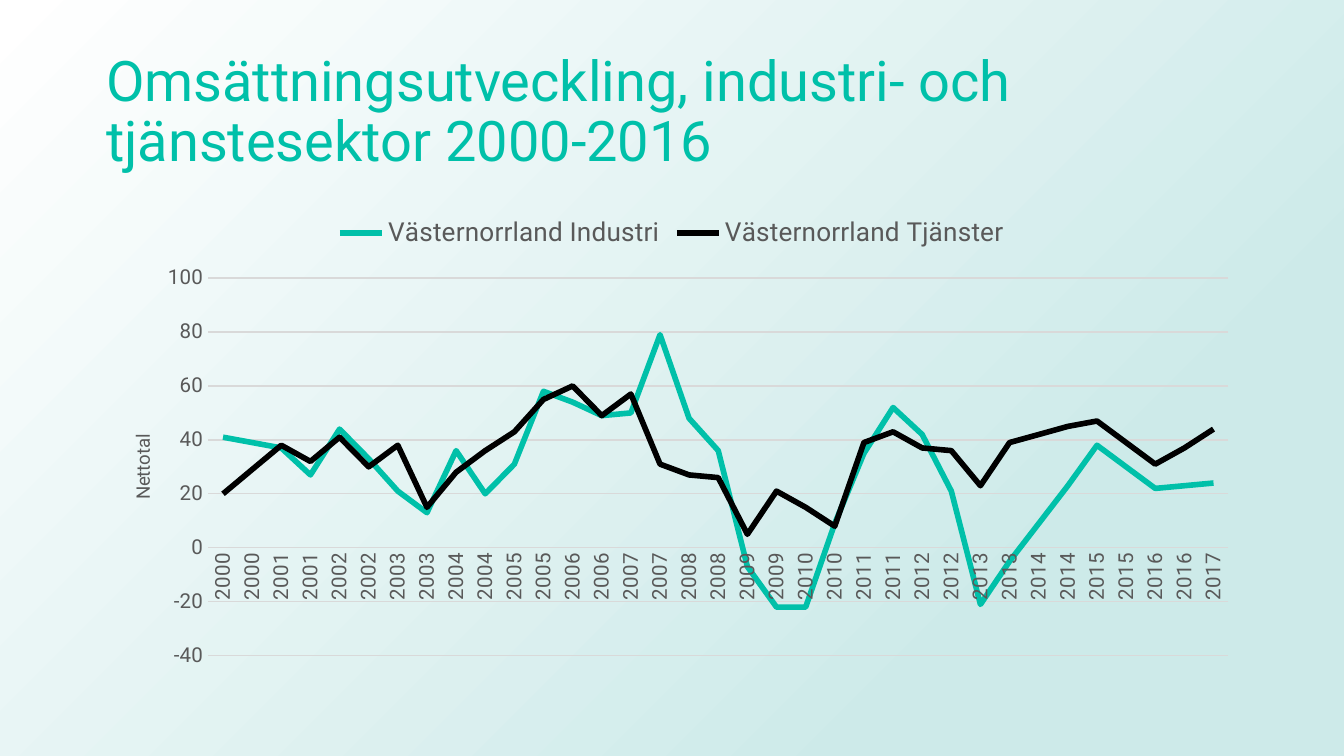
from lxml.etree import SubElement
from pptx import Presentation
from pptx.chart.data import CategoryChartData
from pptx.dml.color import RGBColor
from pptx.enum.chart import XL_CHART_TYPE, XL_LEGEND_POSITION, XL_MARKER_STYLE, XL_TICK_MARK
from pptx.enum.shapes import MSO_SHAPE
from pptx.enum.text import MSO_ANCHOR, MSO_AUTO_SIZE, PP_ALIGN
from pptx.oxml import parse_xml
from pptx.oxml.ns import nsdecls, qn
from pptx.util import Cm, Pt

FONT = "Roboto"
COLORS = {
    "teal": "00C0A9",
    "black": "000000",
    "label": "595959",
    "grid": "D9D9D9",
    "mist": "CDEAE9",
    "white": "FFFFFF",
}
PAGE_WIDTH, PAGE_HEIGHT = Cm(25.4), Cm(14.29)

# Half-yearly values, from 2000 to the first half of 2017
YEARS = [str(2000 + half // 2) for half in range(35)]
SERIES = [
    ("Västernorrland Industri", "teal",
     [41, 39, 37, 27, 44, 33, 21, 13, 36, 20, 31, 58, 54, 49, 50, 79, 48, 36,
      -7, -22, -22, 9, 35, 52, 42, 21, -21, -5, 9, 23, 38, 30, 22, 23, 24]),
    ("Västernorrland Tjänster", "black",
     [20, 29, 38, 32, 41, 30, 38, 15, 28, 36, 43, 55, 60, 49, 57, 31, 27, 26,
      5, 21, 15, 8, 39, 43, 37, 36, 23, 39, 42, 45, 47, 39, 31, 37, 44]),
]


def color(name):
    return RGBColor.from_string(COLORS[name])


def style_font(font, size, name):
    font.name = FONT
    font.size = Pt(size)
    font.bold = False
    font.color.rgb = color(name)


def style_line(line, name, width):
    line.color.rgb = color(name)
    line.width = Pt(width)


def turn_upright(text_body):
    """Make chart text read from bottom to top."""
    text_body.find(qn("a:bodyPr")).set("rot", "-5400000")


def set_layout(parent, index, **places):
    """Fix a chart part at fractions of the chart box."""
    for old in parent.findall(qn("c:layout")):
        parent.remove(old)
    layout = parse_xml(f"<c:layout {nsdecls('c')}><c:manualLayout/></c:layout>")
    for tag, value in places.items():
        SubElement(layout[0], qn(f"c:{tag}")).set("val", str(value))
    parent.insert(index, layout)


def add_backdrop(page, box):
    backdrop = page.shapes.add_shape(MSO_SHAPE.RECTANGLE, *box)
    backdrop.shadow.inherit = False
    backdrop.line.fill.background()
    backdrop.fill.gradient()
    for stop, (name, position) in zip(backdrop.fill.gradient_stops,
                                      [("mist", 0.23), ("white", 1)]):
        stop.color.rgb = color(name)
        stop.position = position
    # Radial gradient that spreads from the bottom right corner
    gradient = backdrop.element.spPr.find(qn("a:gradFill"))
    gradient.replace(gradient.find(qn("a:lin")), parse_xml(
        f'<a:path {nsdecls("a")} path="circle">'
        '<a:fillToRect l="100000" t="100000"/></a:path>'))
    page.shapes._spTree.insert(2, backdrop.element)


def add_title(page, box):
    title = page.shapes.title
    title.left, title.top, title.width, title.height = box
    frame = title.text_frame
    frame.word_wrap = True
    frame.auto_size = MSO_AUTO_SIZE.NONE
    frame.vertical_anchor = MSO_ANCHOR.MIDDLE
    para = frame.paragraphs[0]
    para.alignment = PP_ALIGN.LEFT
    para.line_spacing = 0.9
    span = para.add_run()
    span.text = "Omsättningsutveckling, industri- och tjänstesektor 2000-2016"
    style_font(span.font, 30, "teal")


def add_line_chart(page, box):
    data = CategoryChartData(number_format="0")
    data.categories = YEARS
    for name, _, values in SERIES:
        data.add_series(name, values)
    chart = page.shapes.add_chart(XL_CHART_TYPE.LINE, *box, data).chart
    chart.has_title = False
    style_font(chart.font, 10, "black")
    plot = chart.plots[0]
    plot.vary_by_categories = False
    for series, (_, name, _) in zip(plot.series, SERIES):
        series.smooth = False
        series.marker.style = XL_MARKER_STYLE.NONE
        style_line(series.format.line, name, 3)

    # Legend
    chart.has_legend = True
    chart.legend.position = XL_LEGEND_POSITION.TOP
    chart.legend.include_in_layout = False
    style_font(chart.legend.font, 14, "label")

    # Axes
    years, totals = chart.category_axis, chart.value_axis
    for axis in (years, totals):
        axis.major_tick_mark = axis.minor_tick_mark = XL_TICK_MARK.NONE
        style_font(axis.tick_labels.font, 11, "label")
    style_line(years.format.line, "grid", 0.75)
    turn_upright(years._element.find(qn("c:txPr")))
    totals.minimum_scale, totals.maximum_scale, totals.major_unit = -40, 100, 20
    totals.format.line.fill.background()
    totals.has_major_gridlines = True
    style_line(totals.major_gridlines.format.line, "grid", 0.75)
    totals.tick_labels.number_format = "0"
    totals.tick_labels.number_format_is_linked = False

    # Value axis title
    frame = totals.axis_title.text_frame
    turn_upright(frame._txBody)
    span = frame.paragraphs[0].add_run()
    span.text = "Nettotal"
    style_font(span.font, 10, "label")

    # Places inside the chart box
    set_layout(totals.axis_title._element, 1,
               xMode="edge", yMode="edge", x=0.03, y=0.48)
    set_layout(chart._chartSpace.chart.plotArea, 0, layoutTarget="inner",
               xMode="edge", yMode="edge", x=0.1, y=0.16, w=0.88, h=0.79)


def main():
    deck = Presentation()
    deck.slide_width, deck.slide_height = PAGE_WIDTH, PAGE_HEIGHT
    page = deck.slides.add_slide(deck.slide_layouts.get_by_name("Title Only"))
    left, width = Cm(1.75), Cm(21.9)
    add_backdrop(page, (0, 0, PAGE_WIDTH, PAGE_HEIGHT))
    add_title(page, (left, Cm(0.76), width, Cm(2.77)))
    add_line_chart(page, (left, Cm(3.81), width, Cm(9.04)))
    deck.save("out.pptx")


if __name__ == "__main__":
    main()
